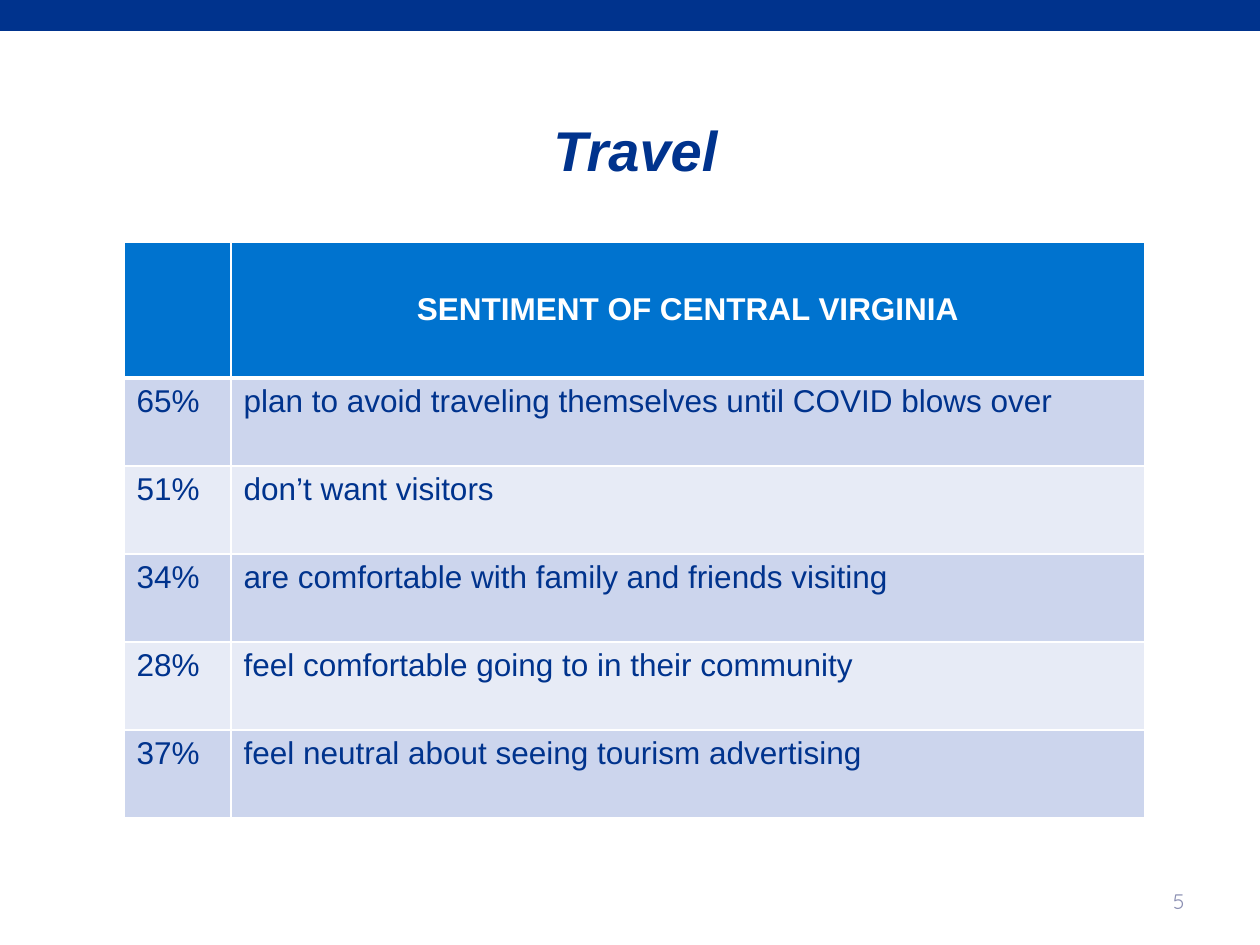
from dataclasses import dataclass

from lxml.etree import SubElement
from pptx import Presentation
from pptx.dml.color import RGBColor as RGB
from pptx.enum.shapes import MSO_SHAPE as Shape
from pptx.enum.text import MSO_ANCHOR as Anchor, PP_ALIGN as Align
from pptx.oxml.ns import qn
from pptx.util import Emu, Pt

PX = 914400 // 126


@dataclass(frozen=True)
class Theme:
    navy: str = "00338D"
    header: str = "0073CF"
    bands: tuple = ("CCD5ED", "E7EBF6")
    white: str = "FFFFFF"
    muted: str = "8C90B3"
    font: str = "Arial"
    number_font: str = "Quicksand"
    title_size: int = 32
    body_size: int = 18
    number_size: int = 12


THEME = Theme()
HEADING = "SENTIMENT OF CENTRAL VIRGINIA"
SENTIMENTS = [
    ("65%", "plan to avoid traveling themselves until COVID blows over"),
    ("51%", "don’t want visitors"),
    ("34%", "are comfortable with family and friends visiting"),
    ("28%", "feel comfortable going to in their community"),
    ("37%", "feel neutral about seeing tourism advertising"),
]


def px(*lengths):
    return [Emu(n * PX) for n in lengths]


def write(tf, text, size, color, font=THEME.font, bold=False, italic=False,
          align=Align.LEFT):
    p = tf.paragraphs[0]
    p.alignment = align
    r = p.add_run()
    r.text = text
    f = r.font
    f.name, f.size, f.bold, f.italic = font, Pt(size), bold, italic
    f.color.rgb = RGB.from_string(color)


def add_top_bar(s, box):
    sp = s.shapes.add_shape(Shape.RECTANGLE, *px(*box))
    sp.shadow.inherit = False
    sp.fill.solid()
    sp.fill.fore_color.rgb = RGB.from_string(THEME.navy)
    sp.line.fill.background()


def add_title(s, box, text):
    title = s.shapes.title
    title.left, title.top, title.width, title.height = px(*box)
    tf = title.text_frame
    tf.word_wrap = True
    tf.vertical_anchor = Anchor.BOTTOM
    write(tf, text, THEME.title_size, THEME.navy, bold=True, italic=True,
          align=Align.CENTER)


def add_page_number(s, box, number):
    tf = s.shapes.add_textbox(*px(*box)).text_frame
    tf.word_wrap = True
    tf.vertical_anchor = Anchor.MIDDLE
    write(tf, str(number), THEME.number_size, THEME.muted,
          font=THEME.number_font, align=Align.RIGHT)


def style_cell(cell, fill, top=1, bottom=1):
    """Give the cell white borders, in points, and a solid fill."""
    tc_pr = cell._tc.get_or_add_tcPr()
    for side, width in (("L", 1), ("R", 1), ("T", top), ("B", bottom)):
        ln = SubElement(tc_pr, qn(f"a:ln{side}"), w=str(Pt(width)))
        solid = SubElement(ln, qn("a:solidFill"))
        SubElement(solid, qn("a:srgbClr"), val=THEME.white)
    cell.fill.solid()
    cell.fill.fore_color.rgb = RGB.from_string(fill)


def add_sentiment_table(s, box, heading, rows):
    x, y, w, h = box
    percent_w, header_h = 107, 136
    row_h = (h - header_h) // len(rows)
    table = s.shapes.add_table(len(rows) + 1, 2, *px(x, y, w, h)).table
    for column, width in zip(table.columns, px(percent_w, w - percent_w)):
        column.width = width
    for row, height in zip(table.rows, px(header_h, *[row_h] * len(rows))):
        row.height = height

    for i, texts in enumerate([("", heading), *rows]):
        is_header = i == 0
        for j, text in enumerate(texts):
            cell = table.cell(i, j)
            if is_header:
                style_cell(cell, THEME.header, bottom=3)
                cell.vertical_anchor = Anchor.MIDDLE
            else:
                style_cell(cell, THEME.bands[(i - 1) % 2],
                           top=3 if i == 1 else 1)
            if text:
                write(cell.text_frame, text, THEME.body_size,
                      THEME.white if is_header else THEME.navy,
                      bold=is_header,
                      align=Align.CENTER if is_header else Align.LEFT)


def main():
    prs = Presentation()
    prs.slide_width, prs.slide_height = px(1260, 945)
    s = prs.slides.add_slide(prs.slide_layouts[5])
    add_top_bar(s, (0, 0, 1260, 31))
    add_title(s, (156, 108, 959, 81), "Travel")
    add_page_number(s, (903, 876, 294, 50), 5)
    add_sentiment_table(s, (124, 242, 1021, 576), HEADING, SENTIMENTS)
    prs.save("out.pptx")


if __name__ == "__main__":
    main()
